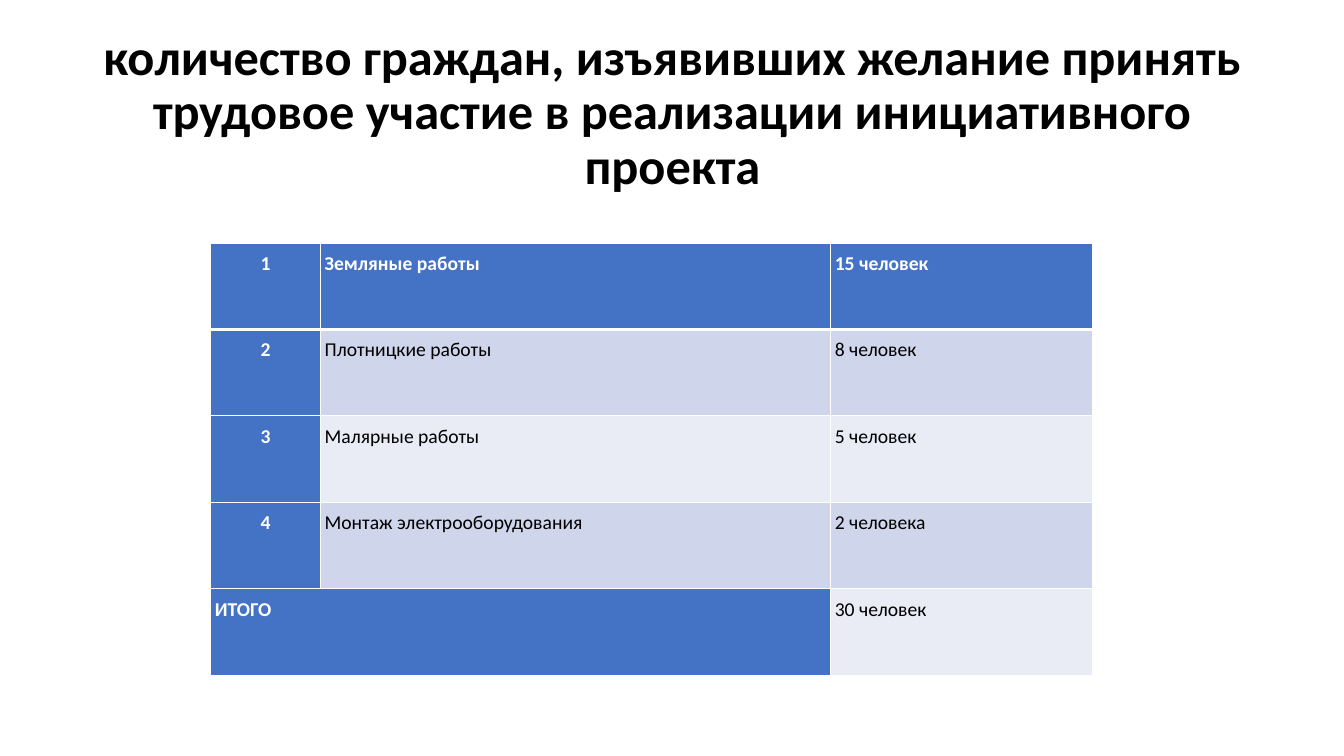
import dataclasses

import pptx
import pptx.dml.color
import pptx.enum.text
import pptx.oxml.ns
import pptx.util
import lxml.etree

PX = 9144
ALIGN = pptx.enum.text.PP_ALIGN
ANCHOR = pptx.enum.text.MSO_ANCHOR


@dataclasses.dataclass(frozen=True)
class Theme:
    """Hold the colours, font and type sizes of the slide."""
    font: str = "Calibri"
    title: int = 36
    body: int = 14
    ink: str = "000000"
    paper: str = "FFFFFF"
    accent: str = "4472C4"
    bands: tuple = ("E9EBF5", "CFD5EA")


THEME = Theme()
TITLE = ("количество граждан, изъявивших желание принять "
         "трудовое участие в реализации инициативного проекта")
WORKS = [
    ("1", "Земляные работы", "15 человек"),
    ("2", "Плотницкие работы", "8 человек"),
    ("3", "Малярные работы", "5 человек"),
    ("4", "Монтаж электрооборудования", "2 человека"),
    ("ИТОГО", "", "30 человек"),
]
COLS = (109, 506, 260)


def rgb(code):
    """Turn a hex code into a colour."""
    return pptx.dml.color.RGBColor.from_string(code)


def write(para, text, size, color, bold):
    """Add one styled run to a paragraph."""
    run = para.add_run()
    run.text = text
    run.font.name = THEME.font
    run.font.size = pptx.util.Pt(size)
    run.font.bold = bold
    run.font.color.rgb = rgb(color)


def edge(cell, low):
    """Draw the borders of a cell, with the given width below."""
    props = cell._tc.get_or_add_tcPr()
    qn = pptx.oxml.ns.qn
    for side, width in (("L", 1), ("R", 1), ("T", 1), ("B", low)):
        line = lxml.etree.SubElement(props, qn(f"a:ln{side}"),
                                     w=str(pptx.util.Pt(width)))
        fill = lxml.etree.SubElement(line, qn("a:solidFill"))
        lxml.etree.SubElement(fill, qn("a:srgbClr"), val=THEME.paper)


def heading(slide, box):
    """Place the centred title in its box."""
    frame = slide.shapes.add_textbox(*(n * PX for n in box)).text_frame
    frame.word_wrap = True
    frame.vertical_anchor = ANCHOR.MIDDLE
    para = frame.paragraphs[0]
    para.alignment = ALIGN.CENTER
    para.line_spacing = 0.9
    write(para, TITLE, THEME.title, THEME.ink, True)


def entry(cell, text, dark, band, low, align):
    """Fill one table cell with its colour, borders and text."""
    edge(cell, low)
    cell.fill.solid()
    cell.fill.fore_color.rgb = rgb(THEME.accent if dark else band)
    cell.margin_left = cell.margin_right = 4 * PX
    cell.margin_top = cell.margin_bottom = 7 * PX
    para = cell.text_frame.paragraphs[0]
    para.alignment = align
    para.line_spacing = 1.07
    para.space_after = pptx.util.Pt(8)
    if text:
        write(para, text, THEME.body, THEME.paper if dark else THEME.ink, dark)


def works(slide, box):
    """Place the table of works and people in its box."""
    shape = slide.shapes.add_table(len(WORKS), len(COLS),
                                   *(n * PX for n in box))
    table = shape.table
    for col, width in zip(table.columns, COLS):
        col.width = width * PX
    last = len(WORKS) - 1
    for r, row in enumerate(WORKS):
        for c, text in enumerate(row):
            mid = c == 0 and r < last
            entry(table.cell(r, c), text, r == 0 or c == 0,
                  THEME.bands[r % 2], 3 if r == 0 else 1,
                  ALIGN.CENTER if mid else ALIGN.LEFT)
    table.cell(last, 0).merge(table.cell(last, 1))


def main():
    """Build the slide and save it."""
    deck = pptx.Presentation()
    deck.slide_width, deck.slide_height = 1333 * PX, 750 * PX
    slide = deck.slides.add_slide(deck.slide_layouts[6])
    heading(slide, (92, 40, 1150, 145))
    works(slide, (209, 241, sum(COLS), 429))
    deck.save("out.pptx")


if __name__ == "__main__":
    main()
